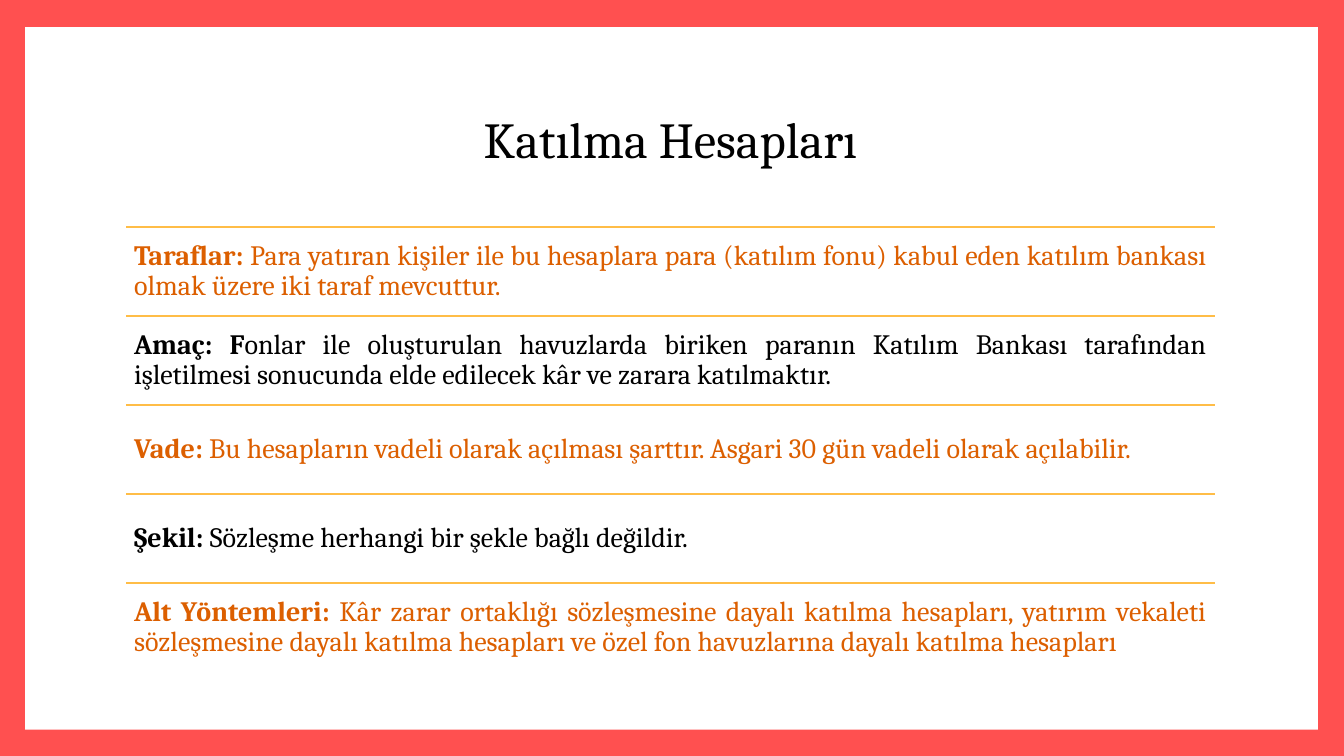
from dataclasses import dataclass

from lxml.etree import SubElement
from pptx import Presentation
from pptx.dml.color import RGBColor
from pptx.enum.shapes import MSO_CONNECTOR, MSO_SHAPE
from pptx.enum.text import MSO_ANCHOR, PP_ALIGN
from pptx.oxml.ns import qn
from pptx.util import Inches, Pt

TITLE = "Katılma Hesapları"
# Each row: bold lead, regular text
ROWS = [
    ("Taraflar: ", "Para yatıran kişiler ile bu hesaplara para (katılım fonu) kabul eden "
                   "katılım bankası olmak üzere iki taraf mevcuttur."),
    ("Amaç: F", "onlar ile oluşturulan havuzlarda biriken paranın Katılım Bankası tarafından "
                "işletilmesi sonucunda elde edilecek kâr ve zarara katılmaktır."),
    ("Vade:", " Bu hesapların vadeli olarak açılması şarttır. Asgari 30 gün vadeli olarak "
              "açılabilir."),
    ("Şekil: ", "Sözleşme herhangi bir şekle bağlı değildir."),
    ("Alt Yöntemleri:", " Kâr zarar ortaklığı sözleşmesine dayalı katılma hesapları, yatırım "
                        "vekaleti sözleşmesine dayalı katılma hesapları ve özel fon havuzlarına "
                        "dayalı katılma hesapları"),
]


@dataclass(frozen=True)
class Theme:
    frame: RGBColor = RGBColor.from_string("FF5050")
    panel: RGBColor = RGBColor.from_string("FFFFFF")
    rule: RGBColor = RGBColor.from_string("FFBD47")
    dark: RGBColor = RGBColor.from_string("000000")
    accent: RGBColor = RGBColor.from_string("DC5F00")
    font: str = "Cambria"
    title_size: int = 36
    body_size: int = 20
    rule_width: float = 1.5


THEME = Theme()
LEFT, WIDTH = 1.25, 10.8
LIST_TOP, LIST_HEIGHT = 2.25, 4.42
ROW_HEIGHT = LIST_HEIGHT / len(ROWS)
ROW_COLORS = (THEME.accent, THEME.dark)


def place(shape, left, top, width, height):
    shape.left, shape.top = Inches(left), Inches(top)
    shape.width, shape.height = Inches(width), Inches(height)


def write(text_frame, runs, alignment, size, color, inset):
    """Fill the frame with one paragraph made of (text, bold) runs."""
    frame_format = {
        "word_wrap": True,
        "vertical_anchor": MSO_ANCHOR.MIDDLE,
        **{f"margin_{side}": Inches(inset) for side in ("left", "right", "top", "bottom")},
    }
    for name, value in frame_format.items():
        setattr(text_frame, name, value)
    paragraph = text_frame.paragraphs[0]
    paragraph.alignment = alignment
    paragraph.line_spacing = 0.9
    for text, bold in runs:
        run = paragraph.add_run()
        run.text = text
        for name, value in {"name": THEME.font, "size": Pt(size), "bold": bold}.items():
            setattr(run.font, name, value)
        run.font.color.rgb = color


def add_panel(slide):
    panel = slide.shapes.add_shape(MSO_SHAPE.RECTANGLE, 0, 0, 0, 0)
    place(panel, 0.25, 0.27, 12.82, 6.97)
    panel.shadow.inherit = False
    panel.fill.solid()
    panel.fill.fore_color.rgb = THEME.panel
    panel.line.fill.background()


def add_title(slide):
    title = slide.shapes.title
    place(title, LEFT, 0.67, WIDTH, 1.48)
    write(title.text_frame, [(TITLE, False)], PP_ALIGN.CENTER,
          THEME.title_size, THEME.dark, 0.05)
    # Bring the title in front of the panel
    slide.shapes._spTree.append(title._element)


def add_row(group, index, lead, text):
    top = LIST_TOP + index * ROW_HEIGHT
    rule = group.shapes.add_connector(
        MSO_CONNECTOR.STRAIGHT,
        Inches(LEFT), Inches(top), Inches(LEFT + WIDTH), Inches(top))
    rule.line.color.rgb = THEME.rule
    rule.line.width = Pt(THEME.rule_width)
    SubElement(rule._element.spPr, qn("a:effectLst"))

    box = group.shapes.add_textbox(
        Inches(LEFT), Inches(top), Inches(WIDTH), Inches(ROW_HEIGHT))
    write(box.text_frame, [(lead, True), (text, False)], PP_ALIGN.JUSTIFY,
          THEME.body_size, ROW_COLORS[index % len(ROW_COLORS)], 0.08)


def main():
    presentation = Presentation()
    presentation.slide_width, presentation.slide_height = Inches(13.33), Inches(7.5)
    title_only = presentation.slide_layouts.get_by_name("Title Only")
    slide = presentation.slides.add_slide(title_only)
    slide.background.fill.solid()
    slide.background.fill.fore_color.rgb = THEME.frame

    add_panel(slide)
    add_title(slide)
    group = slide.shapes.add_group_shape()
    for index, (lead, text) in enumerate(ROWS):
        add_row(group, index, lead, text)
    presentation.save("out.pptx")


if __name__ == "__main__":
    main()
